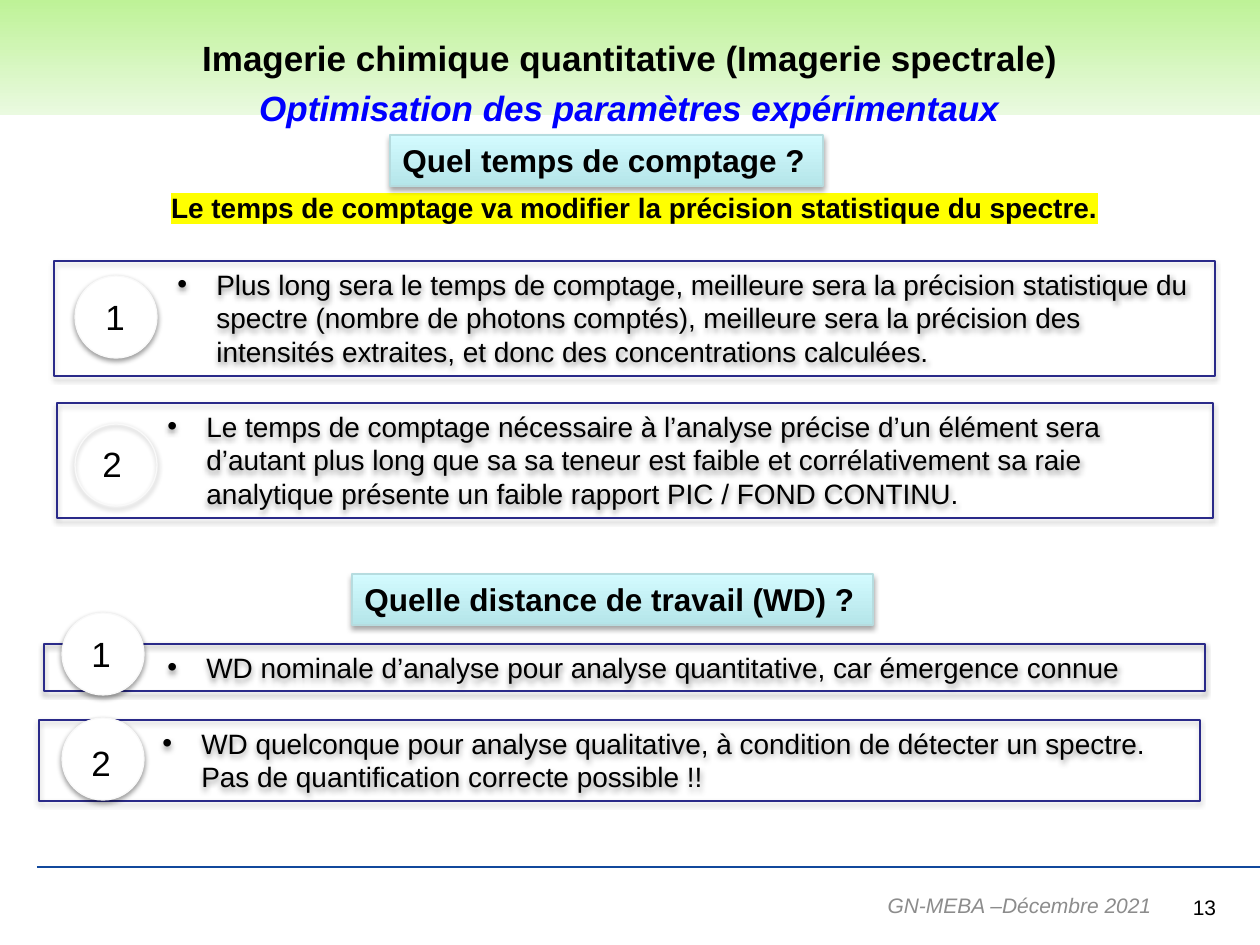
from pptx import Presentation
from pptx.dml.color import RGBColor
from pptx.enum.shapes import MSO_CONNECTOR, MSO_SHAPE
from pptx.enum.text import MSO_ANCHOR, PP_ALIGN
from pptx.oxml import parse_xml
from pptx.oxml.ns import nsdecls
from pptx.util import Pt

SCALE = 914400 / 126
LEFT, MID, RIGHT = PP_ALIGN.LEFT, PP_ALIGN.CENTER, PP_ALIGN.RIGHT

THEME = {
    "font": "Arial", "edge": "2A2A89", "ring": "F9F9F9", "rule": "11489C",
    "mark": "FFFF00", "white": "FFFFFF", "trim": "B6DCDF",
    "band": ("BEF297", "EAFAE0"), "head": ("B5E5E9", "D3FBFF"),
    "title": {"size": 20, "bold": True, "color": "000000"},
    "sub": {"size": 20, "bold": True, "italic": True, "color": "0000FF"},
    "ask": {"size": 18, "bold": True, "color": "000000"},
    "key": {"size": 16, "bold": True, "color": "000000"},
    "body": {"size": 16, "color": "000000"},
    "digit": {"size": 20, "color": "000000"},
    "page": {"size": 12, "color": "000000"},
    "foot": {"size": 12, "italic": True, "color": "8C8C8C"},
}

TITLE = "Imagerie chimique quantitative (Imagerie spectrale)"
SUB = "Optimisation des paramètres expérimentaux"
KEY = "Le temps de comptage va modifier la précision statistique du spectre."
FOOT, PAGE = "GN-MEBA –Décembre 2021", "13"

# heading, its box, then rows: box, text indent, text, disc corner, digit corner, disc filled
PARTS = [
    ("Quel temps de comptage ?", (390, 135, 433, 51), [
        ((54, 261, 1161, 115), 150,
         "Plus long sera le temps de comptage, meilleure sera la précision statistique du "
         "spectre (nombre de photons comptés), meilleure sera la précision des intensités "
         "extraites, et donc des concentrations calculées.", (75, 276), (93, 289), True),
        ((57, 403, 1156, 115), 137,
         "Le temps de comptage nécessaire à l’analyse précise d’un élément sera d’autant "
         "plus long que sa sa teneur est faible et corrélativement sa raie analytique "
         "présente un faible rapport PIC / FOND CONTINU.", (75, 424), (90, 436), False),
    ]),
    ("Quelle distance de travail (WD) ?", (352, 574, 521, 51), [
        ((44, 644, 1161, 47), 150,
         "WD nominale d’analyse pour analyse quantitative, car émergence connue",
         (62, 613), (79, 626), True),
        ((39, 720, 1161, 81), 150,
         "WD quelconque pour analyse qualitative, à condition de détecter un spectre. "
         "Pas de quantification correcte possible !!", (62, 718), (79, 735), True),
    ]),
]
DISC, DIGIT = (82, 82), (45, 55)


def px(n):
    return round(n * SCALE)


def rgb(name):
    return RGBColor.from_string(name)


def write(shape, text, style, align=LEFT, wrap=True, anchor=MSO_ANCHOR.TOP,
          indent=0, mark=None):
    frame = shape.text_frame
    frame.word_wrap, frame.vertical_anchor = wrap, anchor
    para = frame.paragraphs[0]
    para.alignment = align
    if indent:
        props = para._p.get_or_add_pPr()
        props.set("marL", str(px(indent)))
        props.set("indent", str(px(-39)))
        props.append(parse_xml(f'<a:buFont {nsdecls("a")} typeface="Arial"/>'))
        props.append(parse_xml(f'<a:buChar {nsdecls("a")} char="•"/>'))
    run = para.add_run()
    run.text = text
    look = dict(THEME[style])
    run.font.color.rgb = rgb(look.pop("color"))
    look.update(size=Pt(look["size"]), name=THEME["font"])
    for name, value in look.items():
        setattr(run.font, name, value)
    if mark:
        run.font.fill._xPr.solidFill.addnext(parse_xml(
            f'<a:highlight {nsdecls("a")}><a:srgbClr val="{mark}"/></a:highlight>'))


def label(slide, box, text, style, **opts):
    write(slide.shapes.add_textbox(*map(px, box)), text, style, **opts)


def draw(slide, kind, box, fill=None, angle=90, line=None, shade=None):
    """Add a shape; fill is a colour or a pair to blend, shade is (alpha %, drop in pt)."""
    shape = slide.shapes.add_shape(kind, *map(px, box))
    shape.shadow.inherit = False
    if isinstance(fill, tuple):
        shape.fill.gradient()
        shape.fill.gradient_angle = angle
        for stop, color in zip(shape.fill.gradient_stops, fill):
            stop.color.rgb = rgb(color)
    elif fill:
        shape.fill.solid()
        shape.fill.fore_color.rgb = rgb(fill)
    else:
        shape.fill.background()
    if line:
        shape.line.color.rgb = rgb(line)
        shape.line.width = Pt(0.75)
    else:
        shape.line.fill.background()
    if shade:
        alpha, drop = shade
        shape._element.spPr.find("{*}effectLst").append(parse_xml(
            f'<a:outerShdw {nsdecls("a")} blurRad="{Pt(3.1)}" dist="{Pt(drop)}" '
            f'dir="5400000" rotWithShape="0"><a:srgbClr val="000000">'
            f'<a:alpha val="{alpha * 1000}"/></a:srgbClr></a:outerShdw>'))
    return shape


def part(slide, head, box, rows):
    shape = draw(slide, MSO_SHAPE.RECTANGLE, box, THEME["head"], 90, THEME["trim"], (35, 1.8))
    write(shape, head, "ask", wrap=False)
    for frame, indent, text, disc, digit, filled in rows:
        shape = draw(slide, MSO_SHAPE.RECTANGLE, frame, line=THEME["edge"], shade=(38, 1.6))
        write(shape, text, "body", indent=indent)
        draw(slide, MSO_SHAPE.OVAL, disc + DISC, THEME["white"] if filled else None,
             line=THEME["ring"], shade=(38, 1.6))
        label(slide, digit + DIGIT, str(rows.index(
            (frame, indent, text, disc, digit, filled)) + 1), "digit", wrap=False)


def main():
    deck = Presentation()
    deck.slide_width, deck.slide_height = px(1260), px(945)
    slide = deck.slides.add_slide(deck.slide_layouts[6])

    rule = slide.shapes.add_connector(MSO_CONNECTOR.STRAIGHT, *map(px, (37, 867, 1260, 867)))
    rule.line.color.rgb = rgb(THEME["rule"])
    rule.line.width = Pt(0.75)
    rule._element.spPr.append(parse_xml(f'<a:effectLst {nsdecls("a")}/>'))

    middle = MSO_ANCHOR.MIDDLE
    label(slide, (1152, 880, 105, 55), PAGE, "page", align=MID, anchor=middle)
    label(slide, (391, 880, 773, 50), FOOT, "foot", align=RIGHT, anchor=middle)
    label(slide, (54, 184, 1161, 47), KEY, "key", align=MID, mark=THEME["mark"])
    for item in PARTS:
        part(slide, *item)
    band = draw(slide, MSO_SHAPE.RECTANGLE, (0, 0, 1260, 115), THEME["band"], 270)
    write(band, TITLE, "title", align=MID, wrap=False, anchor=middle)
    label(slide, (44, 80, 1171, 55), SUB, "sub", align=MID)
    deck.save("out.pptx")


if __name__ == "__main__":
    main()
